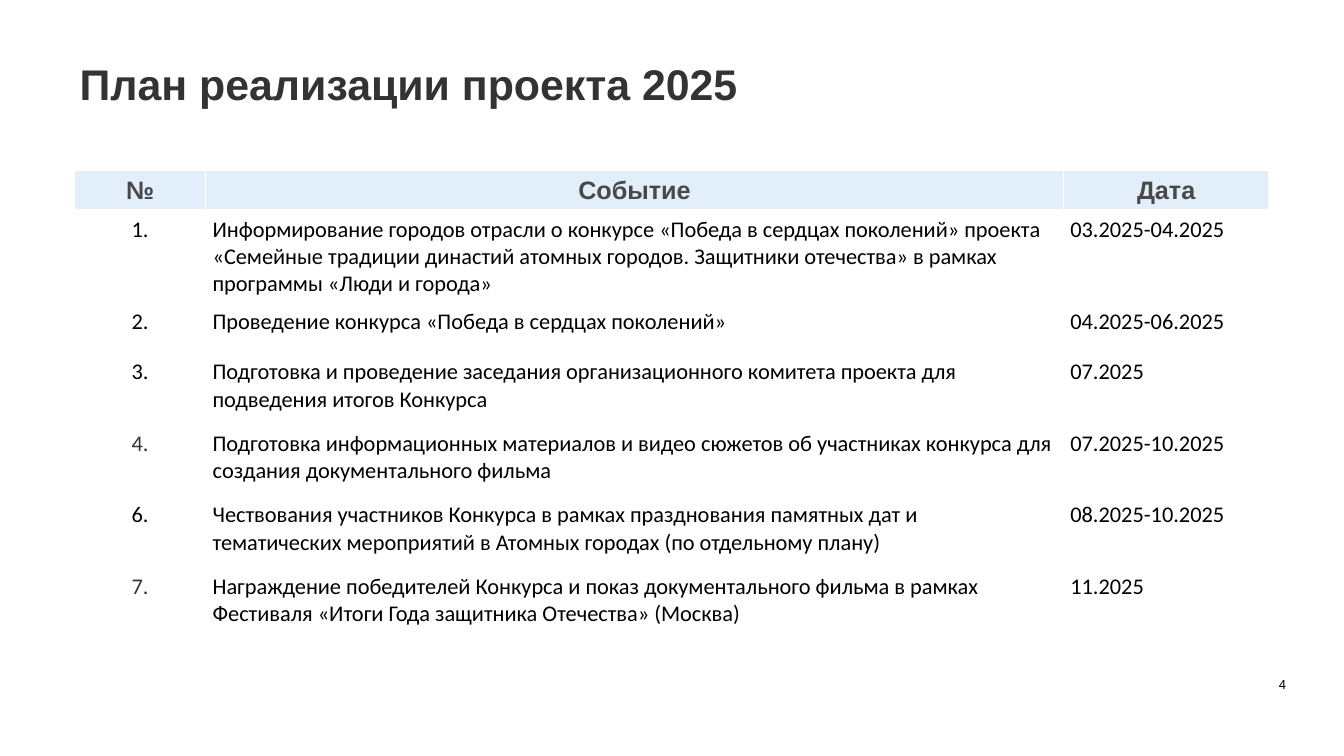
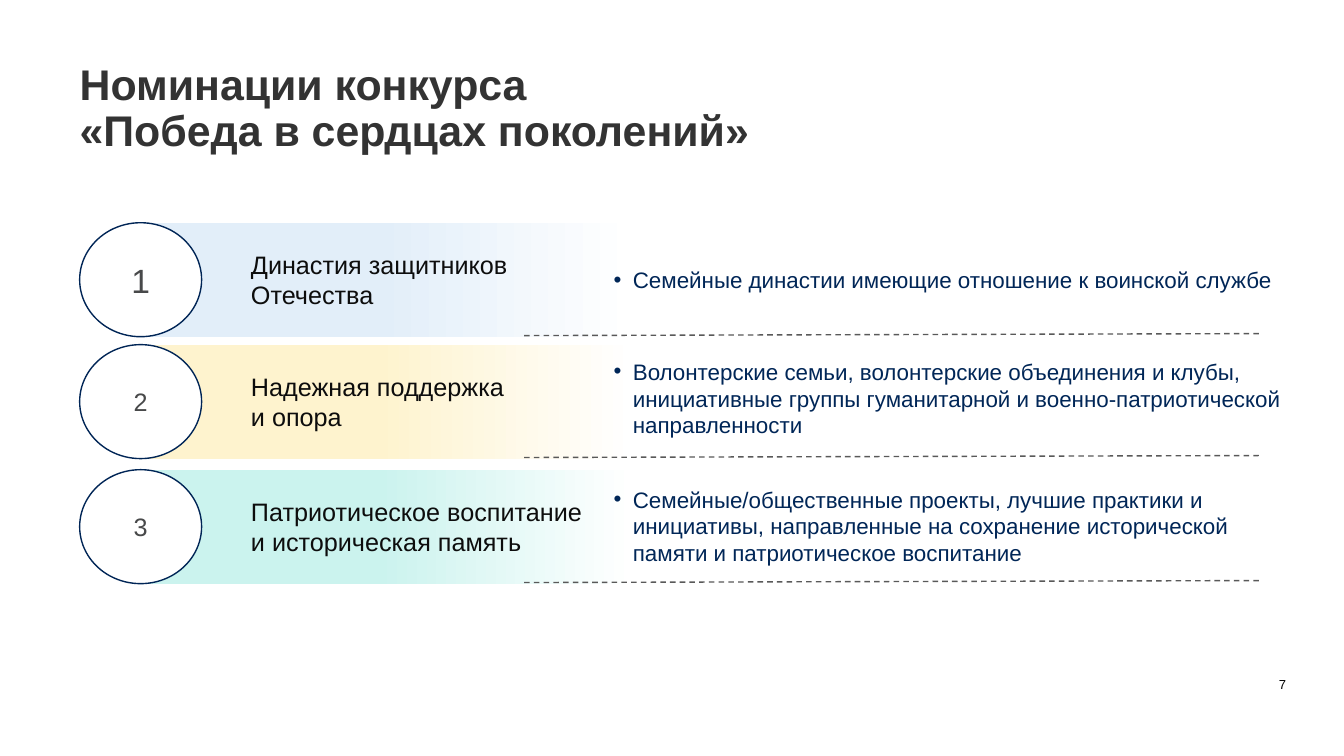
import pptx
import pptx.chart.data
import pptx.dml.color
import pptx.enum.dml
import pptx.enum.shapes
import pptx.enum.text
import pptx.oxml
import pptx.oxml.ns
import pptx.util
from lxml import etree

Pt = pptx.util.Pt
ALIGN = pptx.enum.text.PP_ALIGN
ANCHOR = pptx.enum.text.MSO_ANCHOR
SHAPE = pptx.enum.shapes.MSO_SHAPE

WHITE, BLACK, DARK = "FFFFFF", "000000", "333333"
GREY, DASH, INK = "48494A", "595959", "0D0D0D"
NAVY, OUTLINE = "002657", "002556"
BLUE, YELLOW, MINT = "E2EEF9", "FEF3CE", "CBF3EE"

PLAN_COLUMNS = (93.6, 612.7, 146.9)
PLAN_HEIGHTS = (27, 66, 36, 51, 51, 51, 46)
PLAN_HEADER = ("№", "Событие", "Дата")
PLAN_ROWS = (
    ("1.", "Информирование городов отрасли о конкурсе «Победа в сердцах поколений» проекта "
           "«Семейные традиции династий атомных городов. Защитники отечества» в рамках "
           "программы «Люди и города»", "03.2025-04.2025", BLACK),
    ("2.", "Проведение конкурса «Победа в сердцах поколений»", "04.2025-06.2025", BLACK),
    ("3.", "Подготовка и проведение заседания организационного комитета проекта для "
           "подведения итогов Конкурса", "07.2025", BLACK),
    ("4.", "Подготовка информационных материалов и видео сюжетов об участниках конкурса для "
           "создания документального фильма", "07.2025-10.2025", DARK),
    ("6.", "Чествования участников Конкурса в рамках празднования памятных дат и\n"
           "тематических мероприятий в Атомных городах (по отдельному плану)",
     "08.2025-10.2025", BLACK),
    ("7.", "Награждение победителей Конкурса и показ документального фильма в рамках "
           "Фестиваля «Итоги Года защитника Отечества» (Москва)", "11.2025", DARK),
)

BAND_HEIGHT = 81.4
NOMINATIONS = (
    ("1", 24, 159.1, BLUE, "Династия защитников\nОтечества", 186.5, 26.6,
     "Семейные династии имеющие отношение к воинской службе"),
    ("2", 18, 246.2, YELLOW, "Надежная поддержка\nи опора", 252, 65.5,
     "Волонтерские семьи, волонтерские объединения и клубы, инициативные группы "
     "гуманитарной и военно-патриотической направленности"),
    ("3", 18, 335.5, MINT, "Патриотическое воспитание\nи историческая память", 343.4, 65.5,
     "Семейные/общественные проекты, лучшие практики и инициативы, направленные на "
     "сохранение исторической памяти и патриотическое воспитание"),
)


def color(value):
    """Turn a hex string into a colour."""
    return pptx.dml.color.RGBColor.from_string(value)


def write(frame, text, size, ink, font="Arial", bold=False, align=ALIGN.LEFT):
    """Put text into a frame and format all of its runs."""
    frame.text = text
    frame.word_wrap = True
    for para in frame.paragraphs:
        para.alignment = align
        for span in para.runs:
            span.font.name = font
            span.font.size = Pt(size)
            span.font.bold = bold
            span.font.color.rgb = color(ink)


def add_text(page, left, top, width, height, text, size, ink, inset=True, **style):
    """Add a text box, with or without inner margins."""
    box = page.shapes.add_textbox(Pt(left), Pt(top), Pt(width), Pt(height))
    frame = box.text_frame
    if not inset:
        frame.margin_left = frame.margin_right = 0
        frame.margin_top = frame.margin_bottom = 0
    write(frame, text, size, ink, **style)
    return frame


def add_page(deck, title, number):
    """Add a blank slide with the shared title and page number."""
    page = deck.slides.add_slide(deck.slide_layouts[6])
    frame = add_text(page, 56.9, 45.4, 695, 34.6, title, 30.6, DARK, inset=False, bold=True)
    frame.paragraphs[0].line_spacing = 0.9
    frame = add_text(page, 859.7, 480.2, 59, 14.4, number, 9.3, BLACK,
                     inset=False, align=ALIGN.RIGHT)
    frame.vertical_anchor = ANCHOR.BOTTOM
    return page


def add_borders(cell):
    """Draw white borders around a header cell, thick at the bottom."""
    properties = cell._tc.get_or_add_tcPr()
    for side, width in (("L", 1), ("R", 1), ("T", 1), ("B", 3)):
        line = etree.SubElement(properties, pptx.oxml.ns.qn("a:ln" + side), w=str(Pt(width)))
        fill = etree.SubElement(line, pptx.oxml.ns.qn("a:solidFill"))
        etree.SubElement(fill, pptx.oxml.ns.qn("a:srgbClr"), val=WHITE)


def fill_cell(cell, text, size, ink, fill, **style):
    """Write a table cell and set its fill."""
    write(cell.text_frame, text, size, ink, **style)
    cell.fill.solid()
    cell.fill.fore_color.rgb = color(fill)


def add_plan(page):
    """Add the table of events and dates."""
    table = page.shapes.add_table(
        len(PLAN_HEIGHTS), len(PLAN_COLUMNS), Pt(53.3), Pt(121.7),
        Pt(sum(PLAN_COLUMNS)), Pt(sum(PLAN_HEIGHTS))).table
    table.horz_banding = False
    for column, width in zip(table.columns, PLAN_COLUMNS):
        column.width = Pt(width)
    for row, height in zip(table.rows, PLAN_HEIGHTS):
        row.height = Pt(height)
    for cell, text in zip(table.rows[0].cells, PLAN_HEADER):
        add_borders(cell)
        cell.vertical_anchor = ANCHOR.MIDDLE
        fill_cell(cell, text, 18, GREY, BLUE, bold=True, align=ALIGN.CENTER)
    for index, (number, event, date, number_ink) in enumerate(PLAN_ROWS, start=1):
        cells = table.rows[index].cells
        inks = (number_ink, BLACK, BLACK)
        aligns = (ALIGN.CENTER, ALIGN.LEFT, ALIGN.LEFT)
        for cell, text, ink, align in zip(cells, (number, event, date), inks, aligns):
            cell.margin_left = cell.margin_right = Pt(5)
            fill_cell(cell, text, 16, ink, WHITE, font="Calibri", align=align)


def add_shape(page, kind, left, top, width, text, size, ink, align=ALIGN.LEFT):
    """Add a preset shape of band height with middle-anchored text."""
    shape = page.shapes.add_shape(kind, Pt(left), Pt(top), Pt(width), Pt(BAND_HEIGHT))
    shape.shadow.inherit = False
    shape.text_frame.vertical_anchor = ANCHOR.MIDDLE
    write(shape.text_frame, text, size, ink, align=align)
    return shape


def add_band(page, top, tint, text):
    """Add a band that fades to white on the right."""
    band = add_shape(page, SHAPE.RECTANGLE, 100.1, top, 352.8, text, 18, INK)
    band.text_frame.margin_left = Pt(79.2)
    band.line.fill.background()
    band.fill.gradient()
    band.fill.gradient_angle = 180
    for stop, position, value in zip(band.fill.gradient_stops, (0, 0.52), (WHITE, tint)):
        stop.position = position
        stop.color.rgb = color(value)


def add_circle(page, top, number, size):
    """Add a numbered circle at the start of a band."""
    circle = add_shape(page, SHAPE.OVAL, 56.9, top, 87.1, number, size, GREY, ALIGN.CENTER)
    circle.fill.solid()
    circle.fill.fore_color.rgb = color(WHITE)
    circle.line.color.rgb = color(OUTLINE)
    circle.line.width = Pt(1)


def add_dashes(page, top):
    """Add the dashed line under a band."""
    line = page.shapes.add_connector(
        pptx.enum.shapes.MSO_CONNECTOR.STRAIGHT,
        Pt(374.4), Pt(top + 80.6), Pt(901.4), Pt(top + 79.2))
    line.line.color.rgb = color(DASH)
    line.line.width = Pt(1)
    line.line.dash_style = pptx.enum.dml.MSO_LINE.DASH
    etree.SubElement(line._element.spPr, pptx.oxml.ns.qn("a:effectLst"))


def add_bullet(page, top, height, text):
    """Add a bulleted description."""
    frame = add_text(page, 431.3, top, 498.2, height, text, 16, NAVY)
    properties = frame.paragraphs[0]._p.get_or_add_pPr()
    properties.set("marL", str(Pt(13.7)))
    properties.set("indent", str(-Pt(13.7)))
    etree.SubElement(properties, pptx.oxml.ns.qn("a:buFont"), typeface="Arial")
    etree.SubElement(properties, pptx.oxml.ns.qn("a:buChar"), char="•")


def main():
    """Build and save the deck."""
    deck = pptx.Presentation()
    deck.slide_width, deck.slide_height = Pt(960), Pt(540)
    add_plan(add_page(deck, "План реализации проекта 2025", "4"))
    page = add_page(deck, "Номинации конкурса\v«Победа в сердцах поколений»", "7")
    for number, size, top, tint, name, text_top, text_height, text in NOMINATIONS:
        add_band(page, top, tint, name)
        add_dashes(page, top)
        add_bullet(page, text_top, text_height, text)
        add_circle(page, top, number, size)
    deck.save("out.pptx")


if __name__ == "__main__":
    main()
